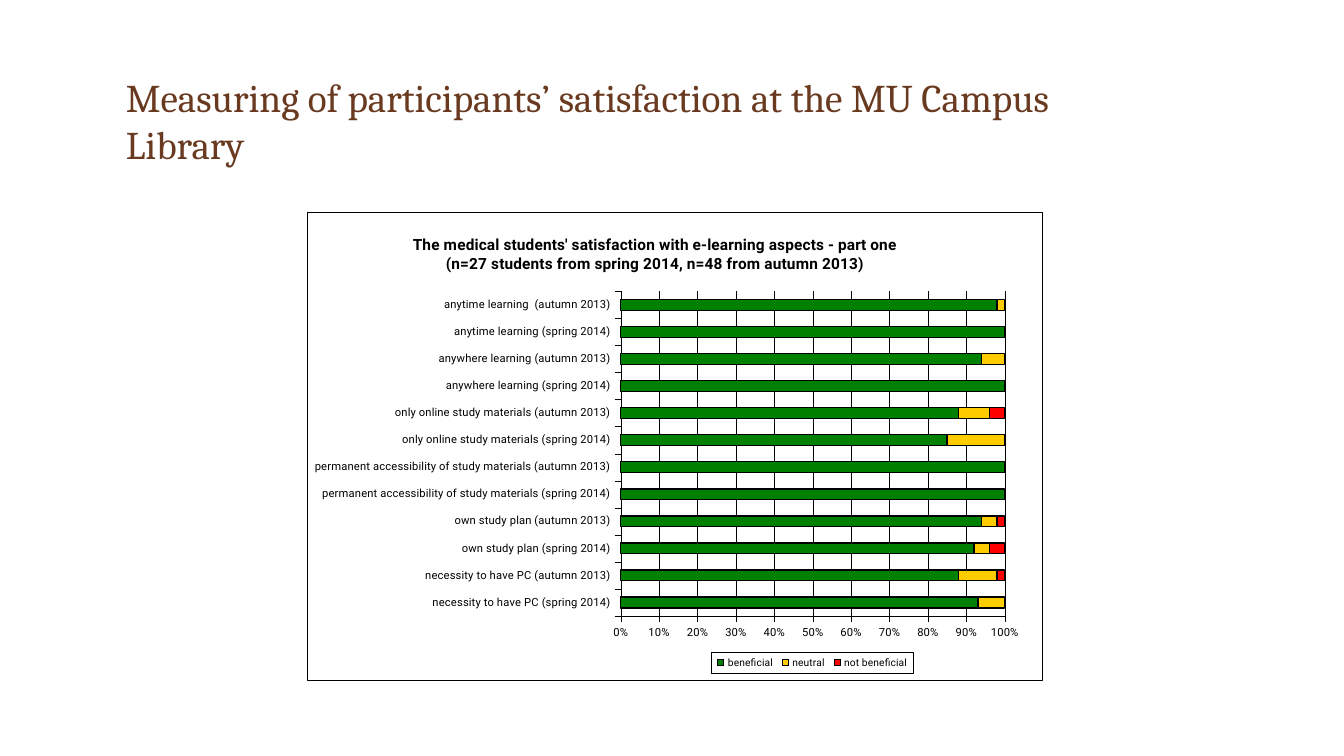
from lxml import etree
from pptx import Presentation
from pptx.chart.data import CategoryChartData
from pptx.dml.color import RGBColor
from pptx.enum.chart import XL_CHART_TYPE, XL_LEGEND_POSITION, XL_TICK_MARK
from pptx.oxml.ns import qn
from pptx.util import Inches, Pt

STACKED = XL_CHART_TYPE.BAR_STACKED_100
BOTTOM = XL_LEGEND_POSITION.BOTTOM
OUT, NONE = XL_TICK_MARK.OUTSIDE, XL_TICK_MARK.NONE

TITLE = "Measuring of participants’ satisfaction at the MU Campus Library"
HEADS = (
    "The medical students' satisfaction with e-learning aspects - part one",
    "(n=27 students from spring 2014, n=48 from autumn 2013)",
)
CATS = (
    "necessity to have PC (spring 2014)",
    "necessity to have PC (autumn 2013)",
    "own study plan (spring 2014)",
    "own study plan (autumn 2013)",
    "permanent accessibility of study materials (spring 2014)",
    "permanent accessibility of study materials (autumn 2013)",
    "only online study materials (spring 2014)",
    "only online study materials (autumn 2013)",
    "anywhere learning (spring 2014)",
    "anywhere learning (autumn 2013)",
    "anytime learning (spring 2014)",
    "anytime learning  (autumn 2013)",
)
SERIES = (
    ("beneficial", "008000", (93, 88, 92, 94, 100, 100, 85, 88, 100, 94, 100, 98)),
    ("neutral", "FFCC00", (7, 10, 4, 4, 0, 0, 15, 8, 0, 6, 0, 2)),
    ("not beneficial", "FF0000", (0, 2, 4, 2, 0, 0, 0, 4, 0, 0, 0, 0)),
)


def color(code):
    return RGBColor.from_string(code)


def stroke(line, width=0.25):
    line.color.rgb = color("000000")
    line.width = Pt(width)


def place(part, x, y, w=None, h=None, inner=False):
    """Give a chart part a manual layout, in fractions of the chart."""
    for old in part.findall(qn("c:layout")):
        part.remove(old)
    layout = etree.Element(qn("c:layout"))
    manual = etree.SubElement(layout, qn("c:manualLayout"))
    rules = [("xMode", "edge"), ("yMode", "edge"),
             ("x", x), ("y", y), ("w", w), ("h", h)]
    if inner:
        rules.insert(0, ("layoutTarget", "inner"))
    for tag, val in rules:
        if val is not None:
            etree.SubElement(manual, qn("c:" + tag)).set("val", str(val))
    # The layout follows the title text or the legend position.
    first = part.find(qn("c:tx"))
    if first is None:
        first = part.find(qn("c:legendPos"))
    if first is None:
        part.insert(0, layout)
    else:
        first.addnext(layout)


def frame(part, last):
    """Fill a chart part white and outline it, ahead of its text properties."""
    props = etree.Element(qn("c:spPr"))
    fill = etree.SubElement(props, qn("a:solidFill"))
    etree.SubElement(fill, qn("a:srgbClr")).set("val", "FFFFFF")
    line = etree.SubElement(props, qn("a:ln"), w=str(Pt(0.25)))
    ink = etree.SubElement(line, qn("a:solidFill"))
    etree.SubElement(ink, qn("a:srgbClr")).set("val", "000000")
    part.find(qn(last)).addprevious(props)


class Deck:
    serif, sans = "Cambria", "Roboto"
    brown, black = "6A3A20", "000000"

    def __init__(self):
        self.prs = Presentation()
        self.prs.slide_width = Inches(13.33)
        self.prs.slide_height = Inches(7.5)
        self.slide = self.prs.slides.add_slide(self.prs.slide_layouts[6])

    def font(self, font, size, name=None, code=None, bold=False):
        font.size, font.bold = Pt(size), bold
        font.name = name or self.sans
        font.color.rgb = color(code or self.black)

    def text(self, x, y, w, h, words, size):
        box = self.slide.shapes.add_textbox(
            Inches(x), Inches(y), Inches(w), Inches(h))
        box.text_frame.word_wrap = True
        run = box.text_frame.paragraphs[0].add_run()
        run.text = words
        self.font(run.font, size, self.serif, self.brown)

    def axis(self, axis):
        axis.major_tick_mark, axis.minor_tick_mark = OUT, NONE
        stroke(axis.format.line)
        self.font(axis.tick_labels.font, 8)

    def head(self, chart, lines, size):
        frame = chart.chart_title.text_frame
        for i, words in enumerate(lines):
            par = frame.add_paragraph() if i else frame.paragraphs[0]
            run = par.add_run()
            run.text = words
            self.font(run.font, size, bold=True)
        chart.chart_title.include_in_layout = False

    def bars(self, x, y, w, h):
        data = CategoryChartData(number_format="0")
        data.categories = CATS
        for name, _, vals in SERIES:
            data.add_series(name, vals)
        chart = self.slide.shapes.add_chart(
            STACKED, Inches(x), Inches(y), Inches(w), Inches(h), data).chart
        self.font(chart.font, 8.5, "Arial")
        self.head(chart, HEADS, 11)

        plot = chart.plots[0]
        plot.gap_width, plot.overlap = 150, 100
        plot.vary_by_categories = False
        for series, (_, code, _) in zip(plot.series, SERIES):
            series.format.fill.solid()
            series.format.fill.fore_color.rgb = color(code)
            stroke(series.format.line, 1)

        self.axis(chart.category_axis)
        values = chart.value_axis
        self.axis(values)
        values.major_unit = 0.1
        values.has_major_gridlines = True
        stroke(values.major_gridlines.format.line)
        values.tick_labels.number_format = "0%"
        values.tick_labels.number_format_is_linked = False

        chart.has_legend = True
        chart.legend.position = BOTTOM
        chart.legend.include_in_layout = False
        self.font(chart.legend.font, 7.3)

        root = chart.element
        place(root.find(".//" + qn("c:title")), 0.14, 0.04)
        place(root.find(".//" + qn("c:plotArea")), 0.427, 0.17, 0.522, 0.693, True)
        legend = root.find(".//" + qn("c:legend"))
        place(legend, 0.55, 0.94, 0.275, 0.045)
        frame(legend, "c:txPr")
        frame(root, "c:txPr")


def main():
    deck = Deck()
    deck.bars(3.04, 2.1, 7.3, 4.65)
    deck.text(1.15, 0.68, 10.55, 1.04, TITLE, 28)
    deck.prs.save("out.pptx")


if __name__ == "__main__":
    main()
